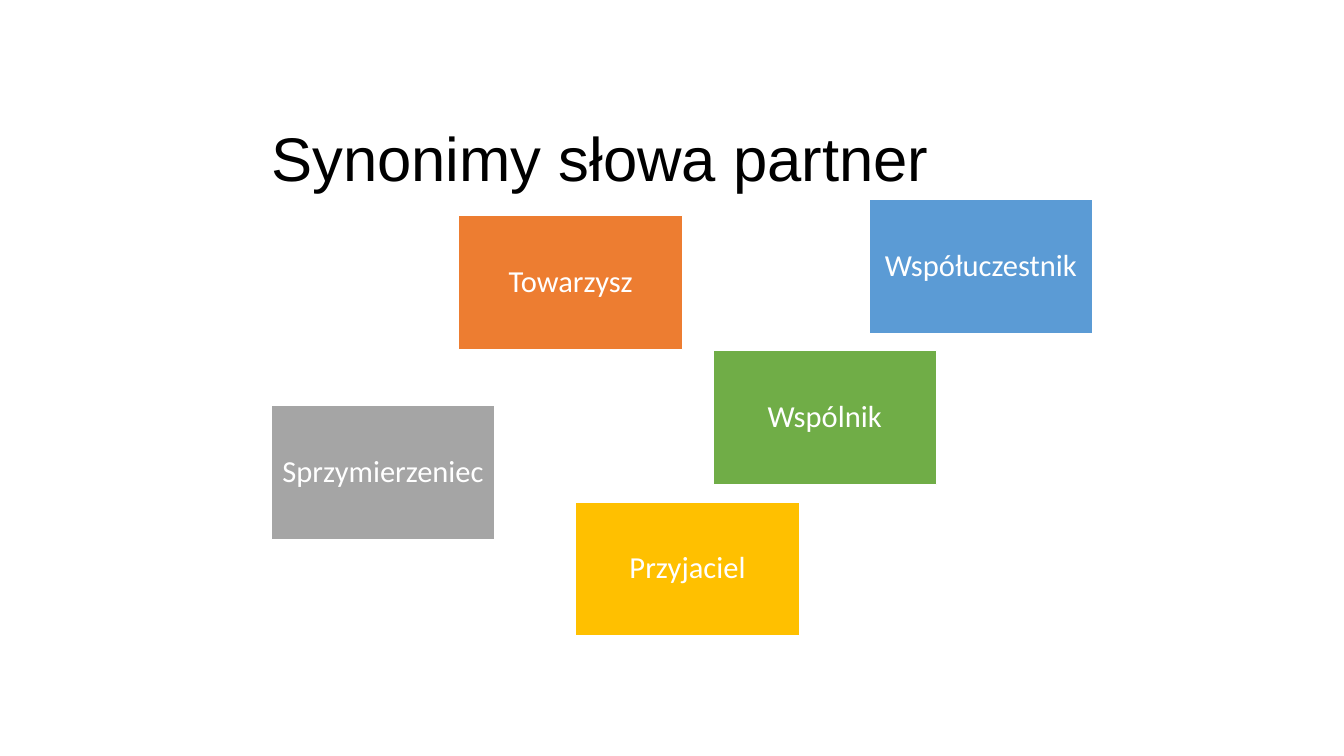
from dataclasses import dataclass

from pptx import Presentation
from pptx.dml.color import RGBColor
from pptx.enum.shapes import MSO_SHAPE as Shape
from pptx.enum.text import MSO_ANCHOR as Anchor, PP_ALIGN as Align
from pptx.slide import Slide
from pptx.text.text import TextFrame
from pptx.util import Inches, Pt

CARD_WIDTH, CARD_HEIGHT = 2.22, 1.33


@dataclass(frozen=True)
class Synonym:
    word: str
    left: float
    top: float
    fill: str


SYNONYMS = [
    Synonym("Towarzysz", 4.55, 2.14, "ED7D31"),
    Synonym("Sprzymierzeniec", 2.69, 4.02, "A5A5A5"),
    Synonym("Przyjaciel", 5.71, 4.98, "FFC000"),
    Synonym("Współuczestnik", 8.62, 1.98, "5B9BD5"),
    Synonym("Wspólnik", 7.07, 3.48, "70AD47"),
]


def color(value: str) -> RGBColor:
    return RGBColor.from_string(value)


def write(frame: TextFrame, text: str, size: float, font: str, ink: str,
          align: Align, anchor: Anchor, inset: float) -> None:
    frame.word_wrap = True
    frame.vertical_anchor = anchor
    frame.margin_left = frame.margin_right = Inches(inset)
    frame.margin_top = frame.margin_bottom = Inches(inset)
    paragraph = frame.paragraphs[0]
    paragraph.alignment = align
    paragraph.line_spacing = 0.9
    run = paragraph.add_run()
    run.text = text
    run.font.size = Pt(size)
    run.font.name = font
    run.font.color.rgb = color(ink)


def add_title(slide: Slide, text: str) -> None:
    title = slide.shapes.add_textbox(Inches(2.69), Inches(1.27), Inches(6.9), Inches(0.67))
    write(title.text_frame, text, 44, "Arial", "000000", Align.LEFT, Anchor.TOP, 0)


def add_card(slide: Slide, synonym: Synonym) -> None:
    card = slide.shapes.add_shape(
        Shape.RECTANGLE, Inches(synonym.left), Inches(synonym.top),
        Inches(CARD_WIDTH), Inches(CARD_HEIGHT))
    card.shadow.inherit = False
    card.fill.solid()
    card.fill.fore_color.rgb = color(synonym.fill)
    card.line.color.rgb = color("FFFFFF")
    card.line.width = Pt(1)
    write(card.text_frame, synonym.word, 21.8, "Calibri", "FFFFFF",
          Align.CENTER, Anchor.MIDDLE, 0.09)


def main() -> None:
    deck = Presentation()
    deck.slide_width, deck.slide_height = Inches(13.33), Inches(7.5)
    slide = deck.slides.add_slide(deck.slide_layouts[6])
    add_title(slide, "Synonimy słowa partner")
    for synonym in SYNONYMS:
        add_card(slide, synonym)
    deck.save("out.pptx")


if __name__ == "__main__":
    main()
